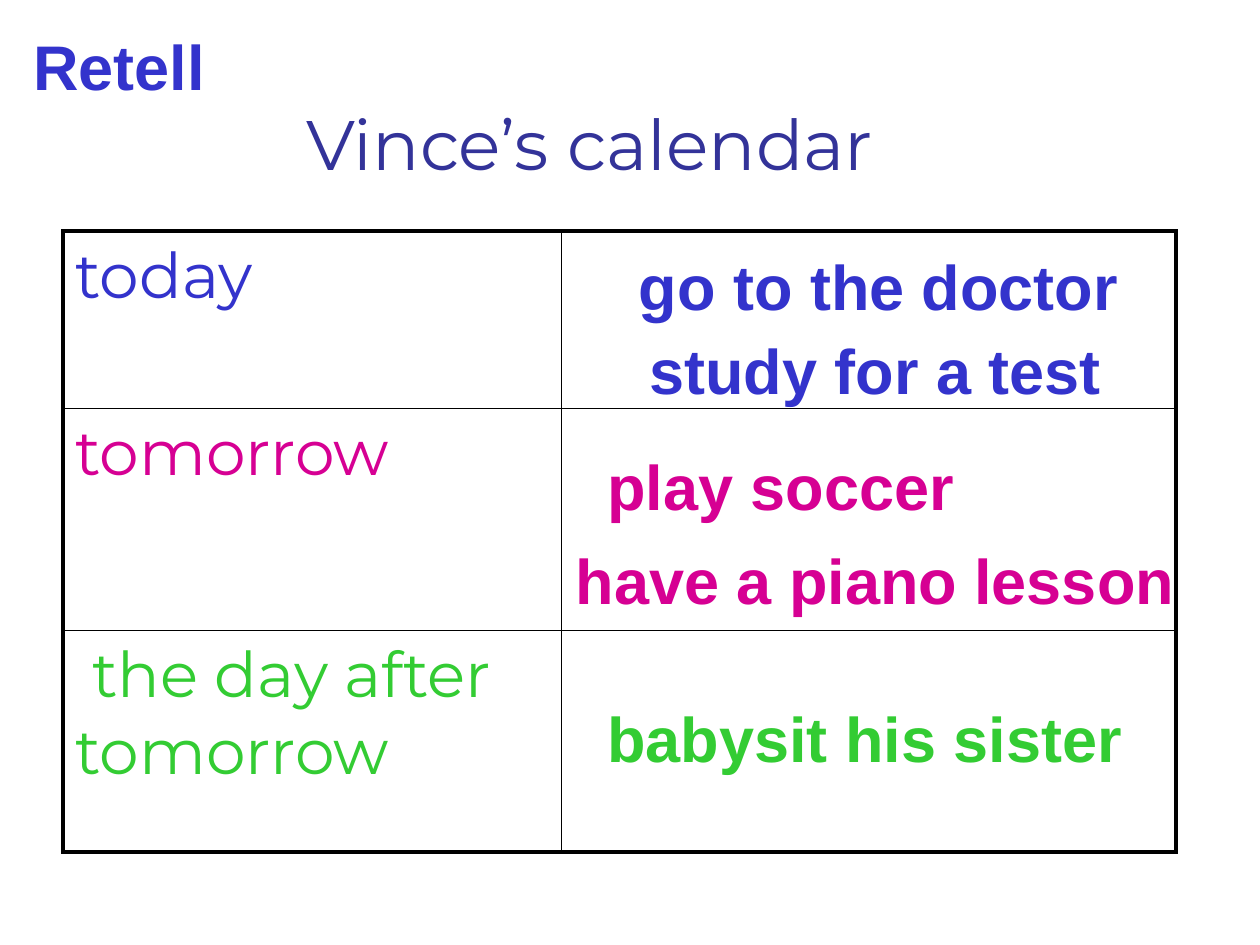
"""Build a slide with a three-day calendar table and its plans."""
from dataclasses import dataclass
from lxml import etree
from pptx import Presentation
from pptx.dml.color import RGBColor
from pptx.enum.text import MSO_AUTO_SIZE
from pptx.oxml.ns import qn
from pptx.util import Pt

FIT = MSO_AUTO_SIZE.SHAPE_TO_FIT_TEXT


@dataclass(frozen=True)
class Theme:
    blue: str = "3333CC"
    navy: str = "333399"
    pink: str = "D60093"
    green: str = "33CC33"
    line: str = "000000"
    light: str = "Montserrat"
    strong: str = "Arial"
    title: float = 40
    body: float = 36
    thick: float = 2.25
    thin: float = 1


@dataclass(frozen=True)
class Label:
    text: str
    left: float
    top: float
    width: float
    color: str


@dataclass(frozen=True)
class Day:
    name: str
    color: str
    height: float


THEME = Theme()
DAYS = [
    Day("today", THEME.blue, 101.5),
    Day("tomorrow", THEME.pink, 126.75),
    Day(" the day after tomorrow", THEME.green, 126.75),
]
COLS = [285, 351]
LABELS = [
    Label(" go to the doctor", 348, 138, 336, THEME.blue),
    Label(" study for a test", 354, 186, 306, THEME.blue),
    Label(" play soccer", 330, 252, 270, THEME.pink),
    Label(" have a piano lesson", 312, 306, 390, THEME.pink),
    Label(" babysit his sister", 330, 396, 342, THEME.green),
    Label("Retell", 12, 12, 228, THEME.blue),
]


def style(para, face: str, size: float, color: str, bold: bool = False) -> None:
    font = para.font
    font.name, font.size, font.bold = face, Pt(size), bold
    font.color.rgb = RGBColor.from_string(color)


def border(cell, sides: dict[str, float]) -> None:
    props = cell._tc.get_or_add_tcPr()
    for spot, (side, width) in enumerate(sides.items()):
        line = etree.Element(qn(f"a:ln{side}"), w=str(Pt(width)))
        fill = etree.SubElement(line, qn("a:solidFill"))
        etree.SubElement(fill, qn("a:srgbClr"), val=THEME.line)
        props.insert(spot, line)


def add_days(slide) -> None:
    rows, cols = len(DAYS), len(COLS)
    high = sum(day.height for day in DAYS)
    table = slide.shapes.add_table(
        rows, cols, Pt(36), Pt(132), Pt(sum(COLS)), Pt(high)
    ).table
    table.first_row = table.horz_banding = False
    for col, width in enumerate(COLS):
        table.columns[col].width = Pt(width)
    for row, day in enumerate(DAYS):
        table.rows[row].height = Pt(day.height)
        for col in range(cols):
            cell = table.cell(row, col)
            cell.fill.background()
            edges = {"L": col == 0, "R": col == cols - 1,
                     "T": row == 0, "B": row == rows - 1}
            border(cell, {side: THEME.thick if edge else THEME.thin
                          for side, edge in edges.items()})
        cell = table.cell(row, 0)
        cell.text = day.name
        style(cell.text_frame.paragraphs[0], THEME.light, THEME.body, day.color)


def add_text(slide, label: Label, height: float, wrap: bool):
    box = slide.shapes.add_textbox(
        Pt(label.left), Pt(label.top), Pt(label.width), Pt(height)
    )
    frame = box.text_frame
    frame.word_wrap, frame.auto_size = wrap, FIT
    para = frame.paragraphs[0]
    para.text = label.text
    return para


def add_label(slide, label: Label) -> None:
    para = add_text(slide, label, 50.5, True)
    para.space_before = Pt(4)
    style(para, THEME.strong, THEME.body, label.color, True)


def add_title(slide) -> None:
    label = Label("Vince’s calendar", 168, 54, 378.5, THEME.navy)
    para = add_text(slide, label, 55.5, False)
    style(para, THEME.light, THEME.title, label.color)


def main() -> None:
    deck = Presentation()
    deck.slide_width, deck.slide_height = Pt(720), Pt(540)
    slide = deck.slides.add_slide(deck.slide_layouts[6])
    add_days(slide)
    add_title(slide)
    for label in LABELS:
        add_label(slide, label)
    deck.save("out.pptx")


if __name__ == "__main__":
    main()
